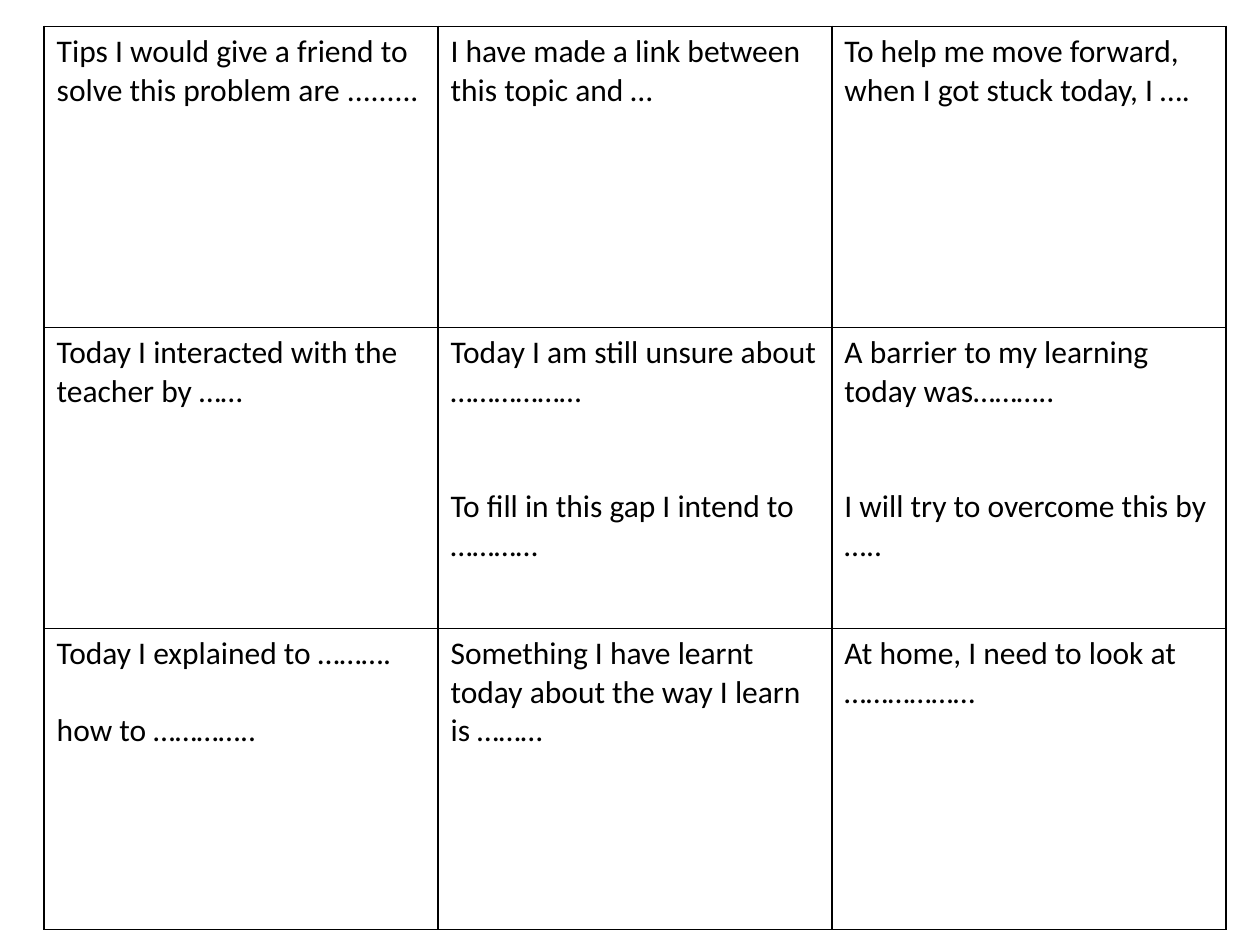
"""Build a three-by-three grid of learning reflection prompts."""
from lxml import etree
from pptx import Presentation
from pptx import util as u
from pptx.dml.color import RGBColor
from pptx.oxml import ns


def rgb(value):
    return RGBColor.from_string(value)


def add_borders(cell, color, width):
    tcPr = cell._tc.get_or_add_tcPr()
    for side in ("lnL", "lnR", "lnT", "lnB"):
        ln = etree.SubElement(tcPr, ns.qn(f"a:{side}"), w=str(u.Pt(width)))
        fill = etree.SubElement(ln, ns.qn("a:solidFill"))
        etree.SubElement(fill, ns.qn("a:srgbClr"), val=color)


LINE = 22
prompts = [
    [
        [("Tips I would give a friend to solve this problem are .........", 0)],
        [("I have made a link between this topic and …", 0)],
        [("To help me move forward, when I got stuck today, I ….", 0)],
    ],
    [
        [("Today I interacted with the teacher by ……", 0)],
        [("Today I am still unsure about ………………", 0),
         ("To fill in this gap I intend to …………", 2)],
        [("A barrier to my learning today was………..", 0),
         ("I will try to overcome this by …..", 2)],
    ],
    [
        [("Today I explained to ……….", 0), ("how to …………..", 1)],
        [("Something I have learnt today about the way I learn is ………", 0)],
        [("At home, I need to look at ………………", 0)],
    ],
]

prs = Presentation()
prs.slide_width, prs.slide_height = u.Cm(25.4), u.Cm(19.05)
s = prs.slides.add_slide(prs.slide_layouts[6])

col_width, row_height = u.Cm(7.94), u.Cm(6.07)
table = s.shapes.add_table(3, 3, u.Cm(0.89), u.Cm(0.53),
                           3 * col_width, 3 * row_height).table
table.first_row = table.horz_banding = False
for col in table.columns:
    col.width = col_width
for row, row_prompts in zip(table.rows, prompts):
    row.height = row_height
    for cell, lines in zip(row.cells, row_prompts):
        add_borders(cell, "000000", 1)
        cell.fill.solid()
        cell.fill.fore_color.rgb = rgb("FFFFFF")
        tf = cell.text_frame
        tf.text = "\n".join(line for line, gap in lines)
        for p, (line, gap) in zip(tf.paragraphs, lines):
            p.space_before = u.Pt(gap * LINE)
            font = p.runs[0].font
            font.name, font.size = "Calibri", u.Pt(18)
            font.color.rgb = rgb("000000")

prs.save("out.pptx")
